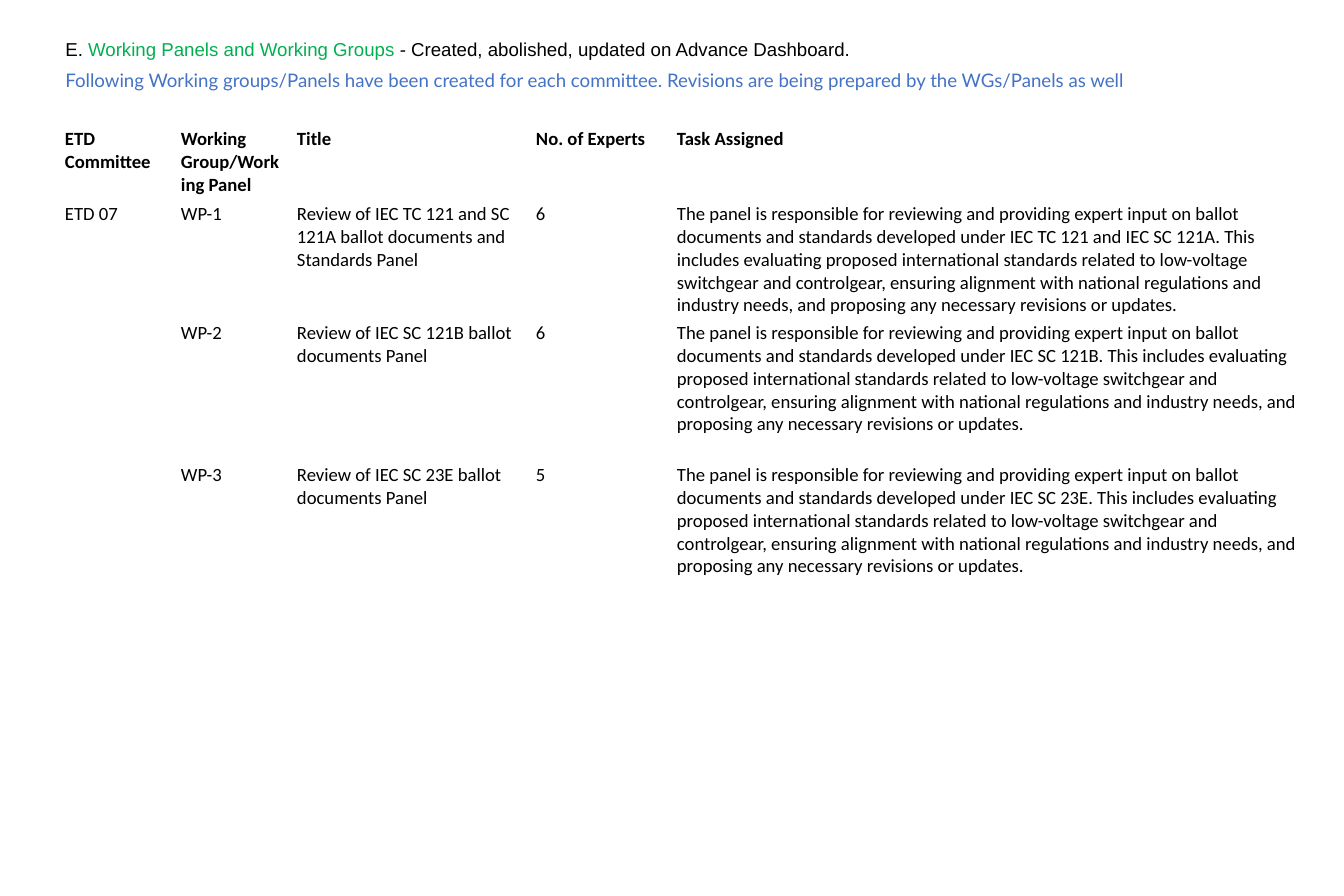
from pptx import Presentation
from pptx import util as u
from pptx.dml import color
from pptx.enum import text

deck = Presentation()
deck.slide_width, deck.slide_height = u.Inches(18), u.Inches(12)
slide = deck.slides.add_slide(deck.slide_layouts[6])
PX = deck.slide_width / 1344


def px(n):
    return u.Emu(round(n * PX))


def style(run, face, tint, bold=False):
    run.font.name = face
    run.font.size = u.Pt(18)
    run.font.bold = bold
    run.font.color.rgb = color.RGBColor.from_string(tint)


# Heading lines
heads = [
    (34, 1060, "Arial", [
        ("E. ", "000000"),
        ("Working Panels and Working Groups ", "00B050"),
        ("- Created, abolished, updated on Advance Dashboard.", "000000")]),
    (65, 1234, "Lato", [
        ("Following Working groups/Panels have been created for each committee. "
         "Revisions are being prepared by the WGs/Panels as well", "4472C4")]),
]
for top, wide, face, parts in heads:
    frame = slide.shapes.add_textbox(px(58), px(top), px(wide), px(30)).text_frame
    frame.word_wrap = True
    frame.auto_size = text.MSO_AUTO_SIZE.SHAPE_TO_FIT_TEXT
    for words, tint in parts:
        run = frame.paragraphs[0].add_run()
        run.text = words
        style(run, face, tint)

# Table content
TASK = ("The panel is responsible for reviewing and providing expert input on ballot "
        "documents and standards developed under {}. This includes evaluating proposed "
        "international standards related to low-voltage switchgear and controlgear, "
        "ensuring alignment with national regulations and industry needs, and proposing "
        "any necessary revisions or updates.")
rows = [
    ("ETD Committee", "Working Group/Working Panel", "Title", "No. of Experts",
     "Task Assigned"),
    ("ETD 07", "WP-1",
     "Review of IEC TC 121 and SC 121A ballot documents and Standards Panel", "6",
     TASK.format("IEC TC 121 and IEC SC 121A")),
    ("", "WP-2", "Review of IEC SC 121B ballot documents Panel", "6",
     TASK.format("IEC SC 121B")),
    ("", "WP-3", "Review of IEC SC 23E ballot documents Panel", "5",
     TASK.format("IEC SC 23E")),
]
wides = [116, 116, 239, 141, 638]
highs = [75, 119, 142, 142]

# Plain table without banding
table = slide.shapes.add_table(len(rows), len(wides), px(58), px(125),
                               px(sum(wides)), px(sum(highs))).table
table.first_row = table.horz_banding = False
for col, wide in zip(table.columns, wides):
    col.width = px(wide)
for r, (row, high) in enumerate(zip(rows, highs)):
    table.rows[r].height = px(high)
    for c, words in enumerate(row):
        cell = table.cell(r, c)
        cell.fill.background()
        cell.margin_left = cell.margin_right = px(7)
        cell.margin_top, cell.margin_bottom = px(3), px(2)
        cell.text_frame.text = words
        for run in cell.text_frame.paragraphs[0].runs:
            style(run, "Calibri", "000000", r == 0)

deck.save("out.pptx")
